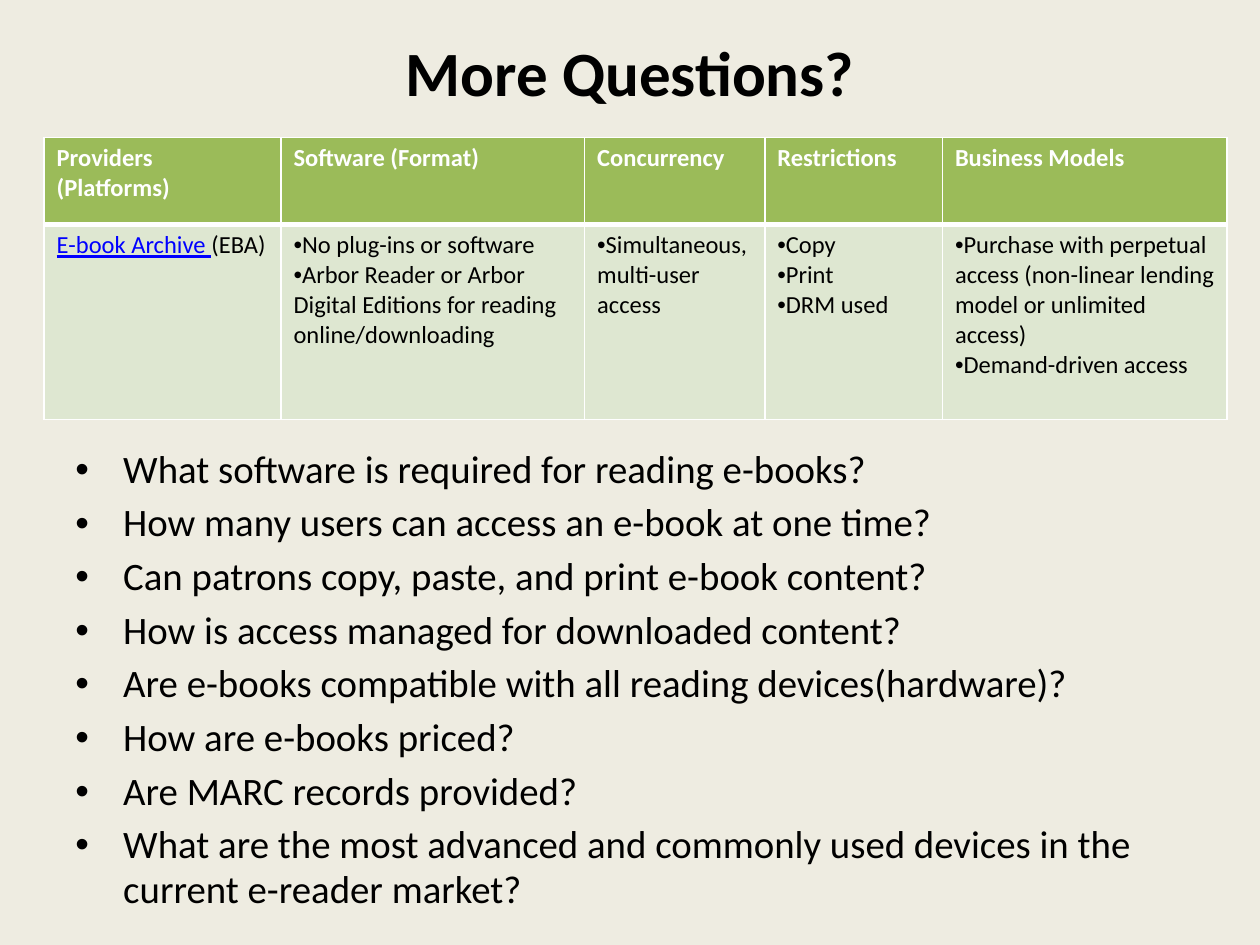
from lxml.etree import SubElement
from pptx import Presentation
from pptx.dml.color import RGBColor
from pptx.enum.text import MSO_ANCHOR, PP_ALIGN
from pptx.oxml.ns import qn
from pptx.util import Emu, Inches, Pt

TITLE = "More Questions?"
HEADERS = ["Providers (Platforms)", "Software (Format)", "Concurrency",
           "Restrictions", "Business Models"]
PROVIDER = ("E-book Archive ", "(EBA)")
FEATURES = [
    ["No plug-ins or software",
     "Arbor Reader or Arbor Digital Editions for reading online/downloading"],
    ["Simultaneous, multi-user access"],
    ["Copy", "Print", "DRM used"],
    ["Purchase with perpetual access (non-linear lending model or unlimited access)",
     "Demand-driven access"],
]
QUESTIONS = [
    "What software is required for reading e-books?",
    "How many users can access an e-book at one time?",
    "Can patrons copy, paste, and print e-book content?",
    "How is access managed for downloaded content?",
    "Are e-books compatible with all reading devices(hardware)?",
    "How are e-books priced?",
    "Are MARC records provided?",
    "What are the most advanced and commonly used devices in the current e-reader market?",
]
COLORS = {"background": "EEECE1", "text": "000000", "header": "9BBB59",
          "body": "DEE7D1", "white": "FFFFFF", "link": "0000FF"}
COLUMN_WIDTHS = [1.88, 2.41, 1.43, 1.41, 2.26]
ROW_HEIGHTS = [0.69, 1.55]
MARGIN = 0.05  # share of the slide's width


def rgb(name):
    return RGBColor.from_string(COLORS[name])


def style(paragraph, size, color="text", bold=False):
    font = paragraph.font
    font.name, font.size, font.bold = "Calibri", Pt(size), bold
    font.color.rgb = rgb(color)


def add_bullet(paragraph, indent=0):
    properties = paragraph._p.get_or_add_pPr()
    properties.set("marL", str(Inches(indent)))
    properties.set("indent", str(-Inches(indent)))
    bullet_font = SubElement(properties, qn("a:buFont"))
    bullet_font.set("typeface", "Arial")
    SubElement(properties, qn("a:buChar")).set("char", "•")


def write_paragraphs(frame, lines):
    """Put one line in each paragraph and return the paragraphs."""
    for line_number, line in enumerate(lines):
        paragraph = frame.paragraphs[0] if line_number == 0 else frame.add_paragraph()
        paragraph.text = line
    return frame.paragraphs


def set_borders(cell, bottom=1, top=1):
    properties = cell._tc.get_or_add_tcPr()
    widths = {"lnL": 1, "lnR": 1, "lnT": top, "lnB": bottom}
    for position, (side, width) in enumerate(widths.items()):
        line = SubElement(properties, qn(f"a:{side}"))
        line.set("w", str(Pt(width)))
        fill = SubElement(line, qn("a:solidFill"))
        SubElement(fill, qn("a:srgbClr")).set("val", COLORS["white"])
        properties.insert(position, line)


def add_text(slide, top, height):
    box = slide.shapes.add_textbox(Emu(int(MARGIN * WIDTH)), Inches(top),
                                   Emu(int((1 - 2 * MARGIN) * WIDTH)), Inches(height))
    box.text_frame.word_wrap = True
    return box.text_frame


deck = Presentation()
WIDTH = deck.slide_width = Inches(10)
deck.slide_height = Inches(7.5)
slide = deck.slides.add_slide(deck.slide_layouts[6])
slide.background.fill.solid()
slide.background.fill.fore_color.rgb = rgb("background")

title = add_text(slide, 0.3, 0.54)
title.vertical_anchor = MSO_ANCHOR.MIDDLE
heading = write_paragraphs(title, [TITLE])[0]
heading.alignment = PP_ALIGN.CENTER
style(heading, 36, bold=True)

questions = add_text(slide, 3.5, 3.82)
for question in write_paragraphs(questions, QUESTIONS):
    question.space_before = Pt(4.8)
    question.line_spacing = 0.97
    add_bullet(question, 0.38)
    style(question, 22.2)

table = slide.shapes.add_table(
    len(ROW_HEIGHTS), len(COLUMN_WIDTHS), Inches(0.35), Inches(1.09),
    Inches(sum(COLUMN_WIDTHS)), Inches(sum(ROW_HEIGHTS))).table
for column, width in zip(table.columns, COLUMN_WIDTHS):
    column.width = Inches(width)
for row, height in zip(table.rows, ROW_HEIGHTS):
    row.height = Inches(height)

details = [None, *FEATURES]
for column, (header, features) in enumerate(zip(HEADERS, details)):
    header_cell, detail_cell = table.cell(0, column), table.cell(1, column)
    for cell, fill in ((header_cell, "header"), (detail_cell, "body")):
        cell.fill.solid()
        cell.fill.fore_color.rgb = rgb(fill)
    set_borders(header_cell, bottom=3)
    set_borders(detail_cell, top=3)
    style(write_paragraphs(header_cell.text_frame, [header])[0], 14, "white", True)
    if features:
        for feature in write_paragraphs(detail_cell.text_frame, features):
            add_bullet(feature)
            style(feature, 14)
    else:
        provider = detail_cell.text_frame.paragraphs[0]
        style(provider, 14)
        name, abbreviation = (provider.add_run() for _ in PROVIDER)
        name.text, abbreviation.text = PROVIDER
        name.font.underline = True
        name.font.color.rgb = rgb("link")

deck.save("out.pptx")
